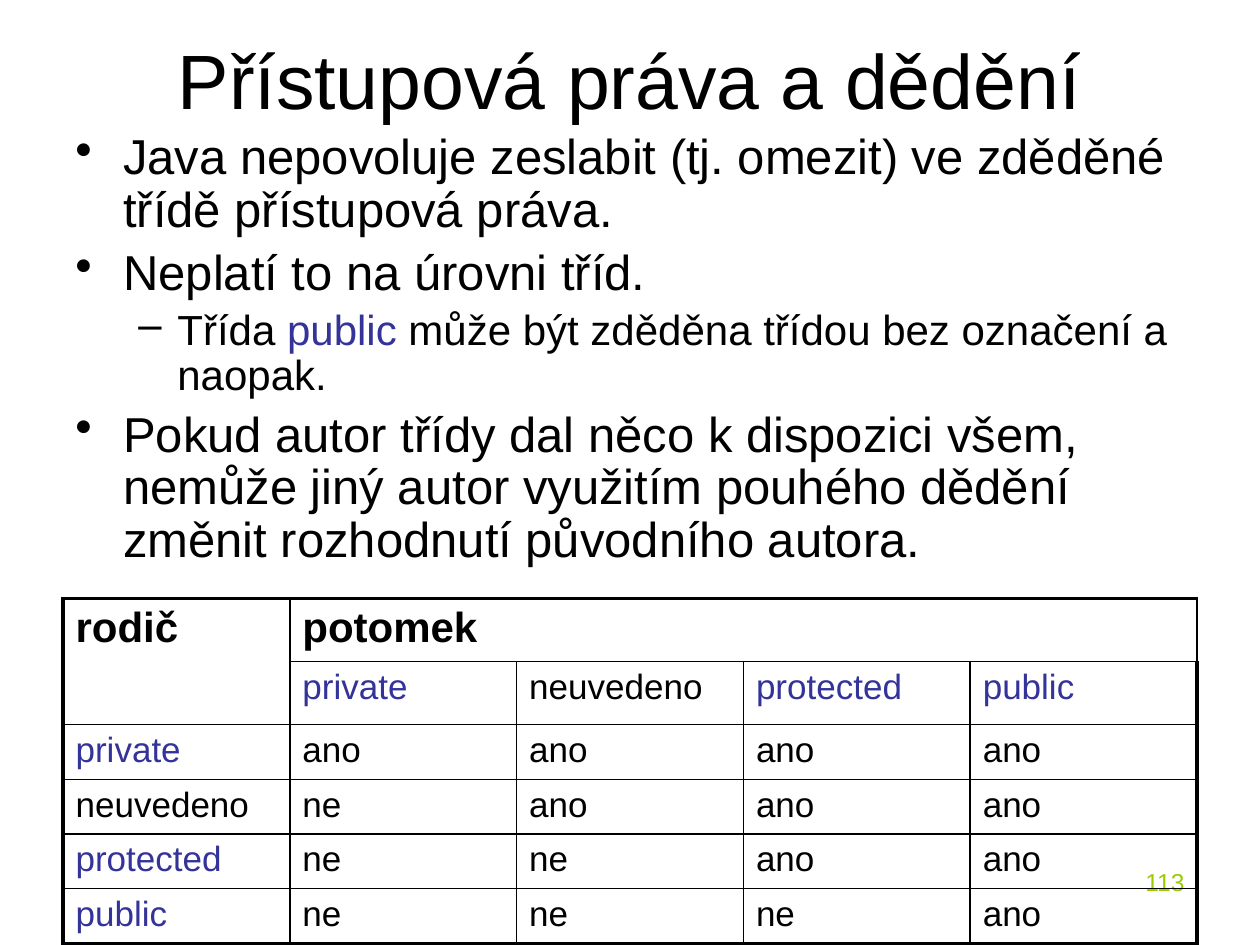
"""Build a slide on access rights and inheritance in Java."""
import pptx
import pptx.util
import pptx.dml.color
import pptx.enum.text
import pptx.oxml
import pptx.oxml.ns
from pptx.util import Inches

BLACK = pptx.dml.color.RGBColor(0x00, 0x00, 0x00)
KEYWORD = pptx.dml.color.RGBColor(0x33, 0x33, 0x99)
GREEN = pptx.dml.color.RGBColor(0x99, 0xCC, 0x00)
KEYWORDS = ("private", "protected", "public")
ALIGN = pptx.enum.text.PP_ALIGN
ANCHOR = pptx.enum.text.MSO_ANCHOR


def style(run, size, color=BLACK, bold=False):
    run.font.name = "Arial"
    run.font.size = pptx.util.Pt(size)
    run.font.bold = bold
    run.font.color.rgb = color


def add_box(left, top, width, height, anchor=ANCHOR.TOP):
    box = slide.shapes.add_textbox(Inches(left), Inches(top), Inches(width), Inches(height))
    box.text_frame.word_wrap = True
    box.text_frame.vertical_anchor = anchor
    return box.text_frame


deck = pptx.Presentation()
deck.slide_width = Inches(10)
deck.slide_height = Inches(7.5)
slide = deck.slides.add_slide(deck.slide_layouts[6])

page_number = add_box(7.17, 6.83, 2.33, 0.52)
page_number.text = "113"
page_number.paragraphs[0].alignment = ALIGN.RIGHT
style(page_number.paragraphs[0].runs[0], 14, GREEN)

title = add_box(0.5, 0, 9, 1.25, ANCHOR.MIDDLE)
title.text = "Přístupová práva a dědění"
title.paragraphs[0].alignment = ALIGN.CENTER
style(title.paragraphs[0].runs[0], 44)

points = [
    (0, ["Java nepovoluje zeslabit (tj. omezit) ve zděděné třídě přístupová práva."]),
    (0, ["Neplatí to na úrovni tříd."]),
    (1, ["Třída ", "public", " může být zděděna třídou bez označení a naopak."]),
    (0, ["Pokud autor třídy dal něco k dispozici všem, nemůže jiný autor využitím "
         "pouhého dědění změnit rozhodnutí původního autora."]),
]
levels = [("•", 28, 0.38, -0.38), ("–", 24, 0.81, -0.31)]
body = add_box(0.5, 1, 9, 3.67)
for index, (level, pieces) in enumerate(points):
    bullet, size, margin, indent = levels[level]
    point = body.paragraphs[0] if index == 0 else body.add_paragraph()
    point.level = level
    point.line_spacing = 0.9
    point.space_before = pptx.util.Pt(size * 0.2)
    properties = point._p.get_or_add_pPr()
    properties.set("marL", str(Inches(margin)))
    properties.set("indent", str(Inches(indent)))
    properties.append(pptx.oxml.parse_xml(
        f'<a:buChar {pptx.oxml.ns.nsdecls("a")} char="{bullet}"/>'))
    for piece in pieces:
        run = point.add_run()
        run.text = piece
        style(run, size, KEYWORD if piece in KEYWORDS else BLACK)

rows = [
    ["rodič", "potomek", "", "", ""],
    ["", "private", "neuvedeno", "protected", "public"],
    ["private", "ano", "ano", "ano", "ano"],
    ["neuvedeno", "ne", "ano", "ano", "ano"],
    ["protected", "ne", "ne", "ano", "ano"],
    ["public", "ne", "ne", "ne", "ano"],
]
heights = [0.47] * 2 + [0.41] * 4
rights = slide.shapes.add_table(
    6, 5, Inches(0.5), Inches(4.75), Inches(9), Inches(sum(heights))).table
rights.first_row = False
rights.horz_banding = False
for row, height in zip(rights.rows, heights):
    row.height = Inches(height)
rights.cell(0, 0).merge(rights.cell(1, 0))
rights.cell(0, 1).merge(rights.cell(0, 4))

for r, words in enumerate(rows):
    for c, word in enumerate(words):
        cell = rights.cell(r, c)
        cell.fill.background()
        if word:
            cell.text_frame.text = word
            style(cell.text_frame.paragraphs[0].runs[0], 24 if r == 0 else 20,
                  KEYWORD if word in KEYWORDS else BLACK, r == 0)
        outer_edges = [("L", c == 0), ("R", c == 4), ("T", r == 0), ("B", r == 5)]
        for position, (side, outer) in enumerate(outer_edges):
            width = pptx.util.Pt(2.25 if outer else 1)
            cell._tc.get_or_add_tcPr().insert(position, pptx.oxml.parse_xml(
                f'<a:ln{side} {pptx.oxml.ns.nsdecls("a")} w="{width}">'
                f'<a:solidFill><a:srgbClr val="{BLACK}"/></a:solidFill></a:ln{side}>'))

deck.save("out.pptx")
